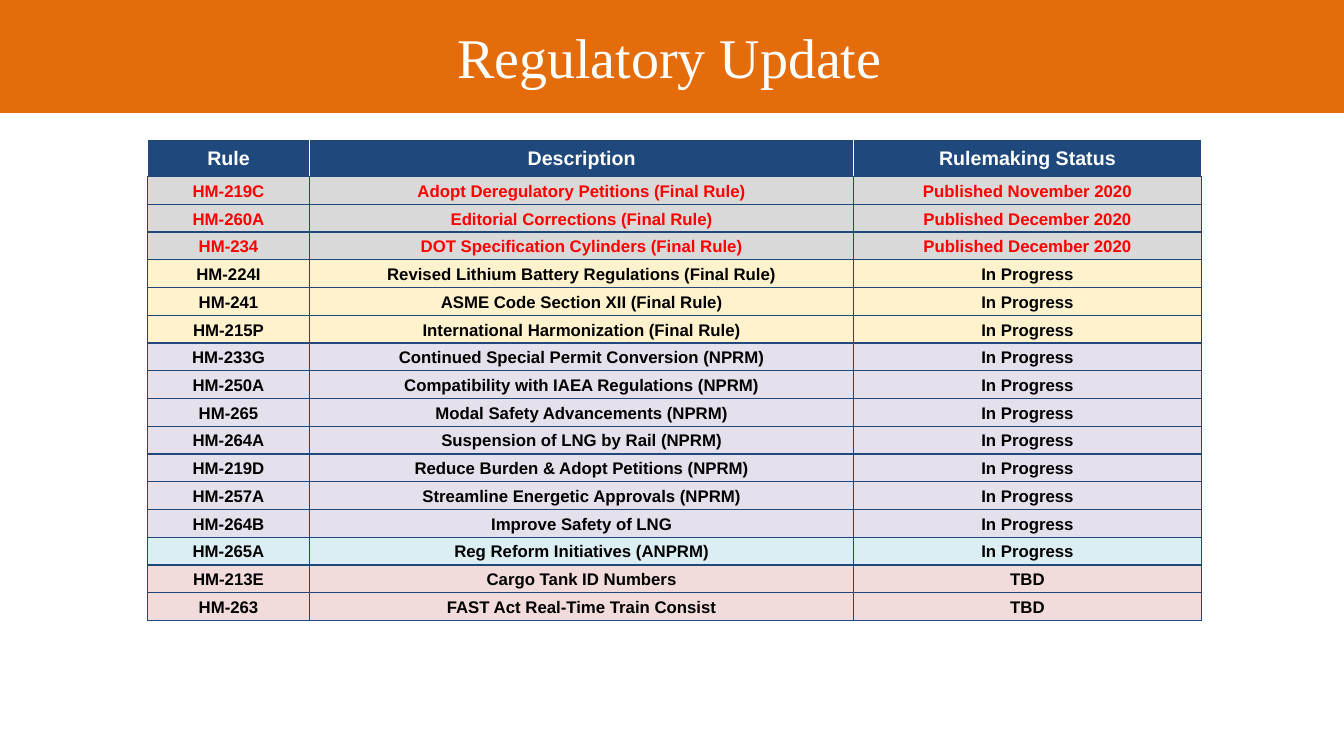
from dataclasses import dataclass

from lxml import etree
from pptx import Presentation
from pptx.dml.color import RGBColor
from pptx.enum.shapes import MSO_SHAPE
from pptx.enum.text import MSO_ANCHOR, MSO_AUTO_SIZE, PP_ALIGN
from pptx.oxml.ns import qn
from pptx.slide import Slide
from pptx.table import _Cell
from pptx.text.text import TextFrame
from pptx.util import Cm, Pt

RECTANGLE = MSO_SHAPE.RECTANGLE
MIDDLE = MSO_ANCHOR.MIDDLE
CENTER = PP_ALIGN.CENTER
NO_AUTOFIT = MSO_AUTO_SIZE.NONE
TITLE_ONLY = 5


@dataclass(frozen=True)
class Theme:
    title_font: str = "Times New Roman"
    table_font: str = "Arial"
    title_size: int = 40
    header_size: int = 14
    body_size: int = 12
    orange: str = "E46C0A"
    navy: str = "1F497D"
    white: str = "FFFFFF"
    black: str = "000000"
    red: str = "FF0000"
    gray: str = "D9D9D9"
    yellow: str = "FFF2CC"
    lilac: str = "E6E0EC"
    aqua: str = "DBEEF4"
    rose: str = "F2DCDB"


THEME = Theme()


@dataclass(frozen=True)
class TextStyle:
    font: str
    size: int
    color: str
    bold: bool = False
    line_spacing: float = 1.0


@dataclass(frozen=True)
class RowStyle:
    text: TextStyle
    fill: str
    side_border: str = THEME.navy
    top_border: str = THEME.navy


@dataclass(frozen=True)
class Rule:
    number: str
    description: str
    status: str
    style: RowStyle


def table_text(size: int, color: str) -> TextStyle:
    return TextStyle(THEME.table_font, size, color, True, 1.06)


TITLE_TEXT = TextStyle(THEME.title_font, THEME.title_size, THEME.white)
BODY_TEXT = table_text(THEME.body_size, THEME.black)
HEADER = RowStyle(table_text(THEME.header_size, THEME.white), THEME.navy,
                  THEME.white, THEME.white)
PUBLISHED = RowStyle(table_text(THEME.body_size, THEME.red), THEME.gray)
FINAL = RowStyle(BODY_TEXT, THEME.yellow)
PROPOSED = RowStyle(BODY_TEXT, THEME.lilac)
ADVANCE = RowStyle(BODY_TEXT, THEME.aqua)
UNDECIDED = RowStyle(BODY_TEXT, THEME.rose)

RULES = [
    Rule("Rule", "Description", "Rulemaking Status", HEADER),
    Rule("HM-219C", "Adopt Deregulatory Petitions (Final Rule)", "Published November 2020", PUBLISHED),
    Rule("HM-260A", "Editorial Corrections (Final Rule)", "Published December 2020", PUBLISHED),
    Rule("HM-234", "DOT Specification Cylinders (Final Rule)", "Published December 2020", PUBLISHED),
    Rule("HM-224I", "Revised Lithium Battery Regulations (Final Rule)", "In Progress", FINAL),
    Rule("HM-241", "ASME Code Section XII (Final Rule)", "In Progress", FINAL),
    Rule("HM-215P", "International Harmonization (Final Rule)", "In Progress", FINAL),
    Rule("HM-233G", "Continued Special Permit Conversion (NPRM)", "In Progress", PROPOSED),
    Rule("HM-250A", "Compatibility with IAEA Regulations (NPRM)", "In Progress", PROPOSED),
    Rule("HM-265", "Modal Safety Advancements (NPRM)", "In Progress", PROPOSED),
    Rule("HM-264A", "Suspension of LNG by Rail (NPRM)", "In Progress", PROPOSED),
    Rule("HM-219D", "Reduce Burden & Adopt Petitions (NPRM)", "In Progress", PROPOSED),
    Rule("HM-257A", "Streamline Energetic Approvals (NPRM)", "In Progress", PROPOSED),
    Rule("HM-264B", "Improve Safety of LNG", "In Progress", PROPOSED),
    Rule("HM-265A", "Reg Reform Initiatives (ANPRM)", "In Progress", ADVANCE),
    Rule("HM-213E", "Cargo Tank ID Numbers", "TBD", UNDECIDED),
    Rule("HM-263", "FAST Act Real-Time Train Consist", "TBD", UNDECIDED),
]

PAGE_WIDTH, PAGE_HEIGHT = Cm(33.87), Cm(19.05)
COLUMN_WIDTHS = (Cm(4.1), Cm(13.7), Cm(8.77))
HEADER_HEIGHT, ROW_HEIGHT = Cm(0.94), Cm(0.7)
BORDER_WIDTH = Pt(1)


def write_text(frame: TextFrame, text: str, style: TextStyle) -> None:
    para = frame.paragraphs[0]
    para.alignment = CENTER
    para.line_spacing = style.line_spacing
    span = para.add_run()
    span.text = text
    span.font.name = style.font
    span.font.size = Pt(style.size)
    span.font.bold = style.bold
    span.font.color.rgb = RGBColor.from_string(style.color)


def add_border(cell: _Cell, side: str, color: str) -> None:
    properties = cell._tc.get_or_add_tcPr()
    line = etree.SubElement(properties, qn(f"a:ln{side}"), w=str(BORDER_WIDTH))
    fill = etree.SubElement(line, qn("a:solidFill"))
    etree.SubElement(fill, qn("a:srgbClr"), val=color)


def format_cell(cell: _Cell, text: str, style: RowStyle) -> None:
    for side, color in (("L", style.side_border), ("R", style.side_border),
                        ("T", style.top_border), ("B", THEME.navy)):
        add_border(cell, side, color)
    cell.fill.solid()
    cell.fill.fore_color.rgb = RGBColor.from_string(style.fill)
    cell.vertical_anchor = MIDDLE
    cell.margin_left = cell.margin_right = cell.margin_top = Cm(0.02)
    cell.margin_bottom = 0
    write_text(cell.text_frame, text, style.text)


def add_title(page: Slide) -> None:
    title = page.shapes.title
    title.left, title.top = Cm(4.17), Cm(0.41)
    title.width, title.height = Cm(25.4), Cm(2.03)
    frame = title.text_frame
    frame.auto_size = NO_AUTOFIT
    frame.word_wrap = True
    frame.vertical_anchor = MIDDLE
    write_text(frame, "Regulatory Update", TITLE_TEXT)

    band = page.shapes.add_shape(RECTANGLE, 0, Cm(0.1), PAGE_WIDTH, Cm(2.62))
    band.shadow.inherit = False
    band.fill.solid()
    band.fill.fore_color.rgb = RGBColor.from_string(THEME.orange)
    band.line.color.rgb = RGBColor.from_string(THEME.orange)
    band.line.width = Pt(6.75)
    title.element.addprevious(band.element)


def add_rules_table(page: Slide) -> None:
    height = HEADER_HEIGHT + ROW_HEIGHT * (len(RULES) - 1)
    table = page.shapes.add_table(len(RULES), len(COLUMN_WIDTHS), Cm(3.71), Cm(3.51),
                                  sum(COLUMN_WIDTHS), height).table
    table.horz_banding = False
    for column, width in zip(table.columns, COLUMN_WIDTHS):
        column.width = width
    for row, rule in zip(table.rows, RULES):
        row.height = HEADER_HEIGHT if rule.style is HEADER else ROW_HEIGHT
        for cell, text in zip(row.cells, (rule.number, rule.description, rule.status)):
            format_cell(cell, text, rule.style)


def main() -> None:
    deck = Presentation()
    deck.slide_width, deck.slide_height = PAGE_WIDTH, PAGE_HEIGHT
    page = deck.slides.add_slide(deck.slide_layouts[TITLE_ONLY])
    add_title(page)
    add_rules_table(page)
    deck.save("out.pptx")


if __name__ == "__main__":
    main()
